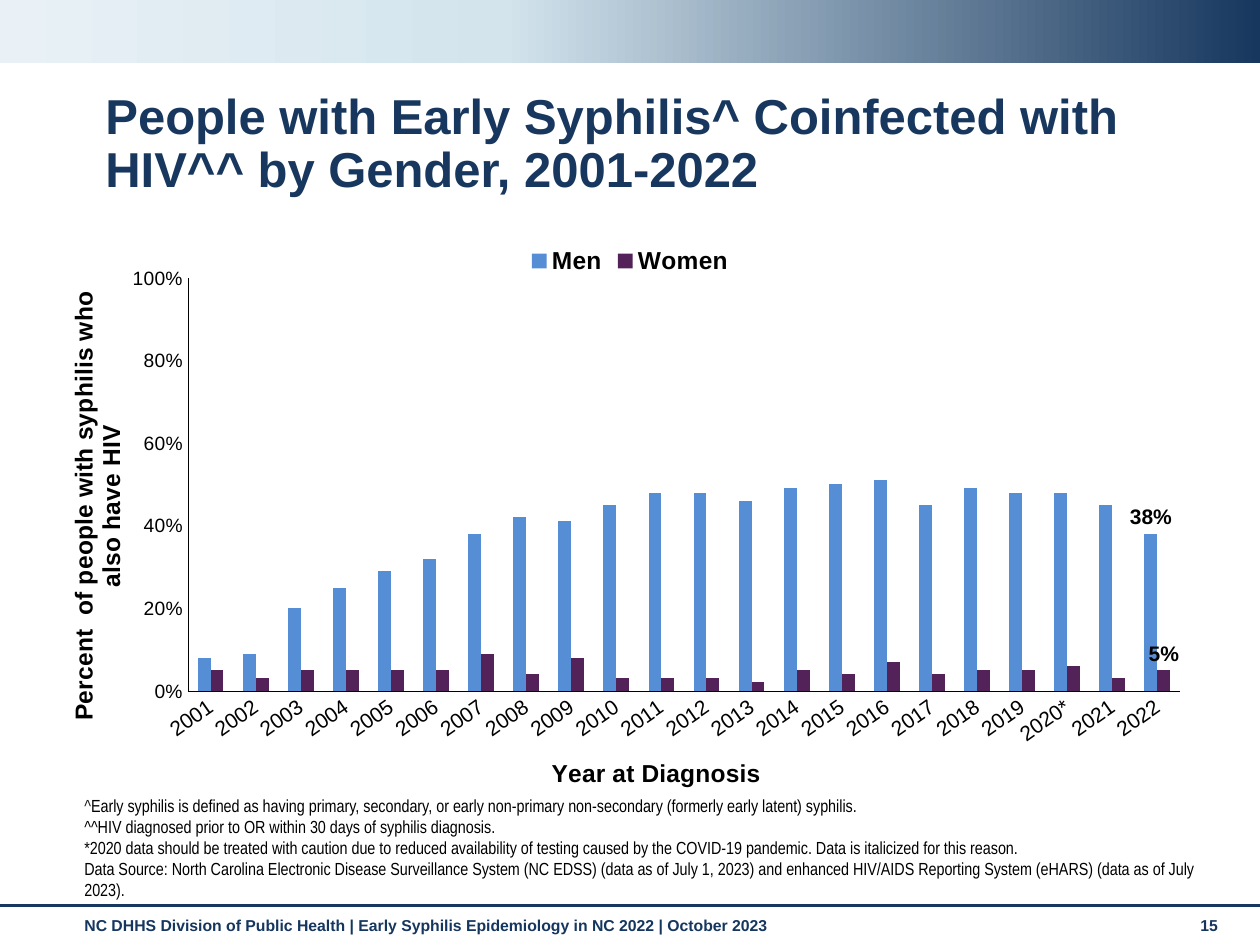
from copy import deepcopy

from lxml.etree import SubElement
from pptx import Presentation
from pptx.chart.data import CategoryChartData
from pptx.dml.color import RGBColor
from pptx.enum.chart import XL_CHART_TYPE as ChartType
from pptx.enum.chart import XL_LABEL_POSITION as LabelPosition
from pptx.enum.chart import XL_LEGEND_POSITION as LegendPosition
from pptx.enum.chart import XL_TICK_MARK as TickMark
from pptx.enum.shapes import MSO_CONNECTOR as Connector
from pptx.enum.shapes import MSO_SHAPE as Shape
from pptx.enum.text import MSO_ANCHOR as Anchor
from pptx.oxml.ns import qn
from pptx.util import Emu, Pt

NAVY = RGBColor(0x17, 0x37, 0x5E)
FOOTER_NAVY = RGBColor(0x15, 0x36, 0x5E)
PALE_BLUE = RGBColor(0xD3, 0xE4, 0xED)
ICE = RGBColor(0xE9, 0xF1, 0xF6)
BLACK = RGBColor(0, 0, 0)
CHARCOAL = RGBColor(0x1A, 0x1A, 0x1A)
MEN_BLUE = RGBColor(0x55, 0x8E, 0xD5)
WOMEN_PURPLE = RGBColor(0x52, 0x22, 0x58)

YEARS = [f"{year}*" if year == 2020 else str(year) for year in range(2001, 2023)]
GENDERS = [
    ("Men", MEN_BLUE, [8, 9, 20, 25, 29, 32, 38, 42, 41, 45, 48, 48,
                       46, 49, 50, 51, 45, 49, 48, 48, 45, 38]),
    ("Women", WOMEN_PURPLE, [5, 3, 5, 5, 5, 5, 9, 4, 8, 3, 3, 3,
                             2, 5, 4, 7, 4, 5, 5, 6, 3, 5]),
]
NOTES = [
    [("^", CHARCOAL),
     ("Early syphilis is defined as having primary, secondary, or early "
      "non-primary non-secondary (formerly early latent) syphilis.", BLACK)],
    [("^^HIV diagnosed prior to OR within 30 days of syphilis diagnosis.", BLACK)],
    [("*2020 data should be treated with caution due to reduced availability of testing "
      "caused by the COVID-19 pandemic. Data is italicized for this reason.", BLACK)],
    [("Data Source: North Carolina Electronic Disease Surveillance System (NC EDSS) "
      "(data as of July 1, 2023) and enhanced HIV/AIDS Reporting System (eHARS) "
      "(data as of July 2023).", BLACK)],
]


def px(length):
    """Turn whole pixels into EMU."""
    return Emu(round(length * 914400 / 126))


def style_font(font, size, color=BLACK, bold=True, name="Arial"):
    """Set face, size, weight and colour of a font."""
    font.name, font.size, font.bold = name, Pt(size), bold
    font.color.rgb = color


def add_text(slide, box, paragraphs, size, bold=True, name="Arial",
             anchor=Anchor.TOP, spacing=None):
    """Fill a wrapped text box with paragraphs of (text, colour) runs."""
    frame = slide.shapes.add_textbox(*map(px, box)).text_frame
    frame.word_wrap = True
    frame.vertical_anchor = anchor
    for index, runs in enumerate(paragraphs):
        paragraph = frame.paragraphs[0] if index == 0 else frame.add_paragraph()
        paragraph.line_spacing = spacing
        for text, color in runs:
            run = paragraph.add_run()
            run.text = text
            style_font(run.font, size, color, bold, name)


def add_banner(slide, box):
    """Draw the gradient band."""
    band = slide.shapes.add_shape(Shape.RECTANGLE, *map(px, box))
    band.shadow.inherit = False
    band.line.fill.background()
    band.fill.gradient()
    band.fill.gradient_angle = 180
    stop_list = next(band._element.iter(qn("a:gsLst")))
    stop_list.append(deepcopy(stop_list[-1]))
    colors = [(0, NAVY), (0.6, PALE_BLUE), (1, ICE)]
    for stop, (position, color) in zip(band.fill.gradient_stops, colors):
        stop.position = position
        stop.color.rgb = color


def add_footer(slide, box):
    """Draw the rule, source line and page number."""
    left, top, width, height = box
    rule = slide.shapes.add_connector(
        Connector.STRAIGHT, px(left), px(top), px(left + width), px(top))
    rule.line.color.rgb = NAVY
    rule.line.width = Pt(1.75)
    SubElement(rule._element.spPr, qn("a:effectLst"))
    credit = "NC DHHS Division of Public Health | Early Syphilis Epidemiology in NC 2022 | October 2023"
    for text, offset, span in [(credit, 72, 1101), ("15", 1188, 55)]:
        add_text(slide, (left + offset, top + 4, span, height - 4),
                 [[(text, FOOTER_NAVY)]], 9)


def style_axis(axis, title, tick_size):
    """Give an axis its title, tick labels and thin line."""
    axis.has_major_gridlines = False
    axis.major_tick_mark = axis.minor_tick_mark = TickMark.NONE
    axis.format.line.color.rgb = BLACK
    axis.format.line.width = Pt(0.25)
    style_font(axis.tick_labels.font, tick_size, bold=False)
    run = axis.axis_title.text_frame.paragraphs[0].add_run()
    run.text = title
    style_font(run.font, 14)


def tilt_tick_labels(axis, degrees):
    """Turn the tick labels of an axis."""
    body = axis._element.find(qn("c:txPr")).find(qn("a:bodyPr"))
    body.set("rot", str(degrees * 60000))
    body.set("vert", "horz")


def set_plot_layout(chart, plot_box, chart_size):
    """Fix the inner plot area inside a chart of the given size."""
    left, top, width, height = plot_box
    chart_width, chart_height = chart_size
    area = chart._chartSpace.chart.plotArea
    for old in area.findall(qn("c:layout")):
        area.remove(old)
    layout = SubElement(area, qn("c:layout"))
    area.insert(0, layout)
    manual = SubElement(layout, qn("c:manualLayout"))
    settings = [("layoutTarget", "inner"), ("xMode", "edge"), ("yMode", "edge"),
                ("x", left / chart_width), ("y", top / chart_height),
                ("w", width / chart_width), ("h", height / chart_height)]
    for tag, value in settings:
        SubElement(manual, qn(f"c:{tag}")).set("val", str(value))


def add_coinfection_chart(slide, box):
    """Chart the yearly coinfection share by gender."""
    data = CategoryChartData(number_format="0%")
    data.categories = YEARS
    for gender, _, percents in GENDERS:
        data.add_series(gender, [percent / 100 for percent in percents])
    chart = slide.shapes.add_chart(
        ChartType.COLUMN_CLUSTERED, *map(px, box), data).chart
    style_font(chart.font, 12)
    chart.has_title = False
    chart.has_legend = True
    chart.legend.position = LegendPosition.TOP
    chart.legend.include_in_layout = False
    style_font(chart.legend.font, 14)

    style_axis(chart.category_axis, "Year at Diagnosis", 12)
    tilt_tick_labels(chart.category_axis, -35)
    shares = chart.value_axis
    style_axis(shares, "Percent  of people with syphilis who also have HIV", 11)
    shares.minimum_scale, shares.maximum_scale, shares.major_unit = 0, 1, 0.2
    shares.tick_labels.number_format = "0%"
    shares.tick_labels.number_format_is_linked = False

    plot = chart.plots[0]
    plot.vary_by_categories = False
    plot.gap_width = 150
    plot.overlap = 0
    for series, (_, color, _) in zip(plot.series, GENDERS):
        series.format.fill.solid()
        series.format.fill.fore_color.rgb = color
        latest = series.points[len(YEARS) - 1].data_label
        style_font(latest.font, 12)
        latest.position = LabelPosition.OUTSIDE_END
    set_plot_layout(chart, (125, 45, 992, 413), box[2:])


def build_slide(slide, box):
    """Place every region of the syphilis and HIV slide."""
    left, top, width, height = box
    add_banner(slide, (left, top, width, 63))
    add_footer(slide, (left, top + 906, width, height - 906))
    title = "People with Early Syphilis^ Coinfected with HIV^^ by Gender, 2001-2022"
    add_text(slide, (left + 93, top + 86, 1150, 120), [[(title, NAVY)]], 28, spacing=0.9)
    add_text(slide, (left + 72, top + 784, 1171, 122), NOTES, 10,
             bold=False, name="Arial Narrow", anchor=Anchor.BOTTOM)
    add_coinfection_chart(slide, (left + 63, top + 233, 1134, 562))


def main():
    """Build and save the presentation."""
    deck = Presentation()
    deck.slide_width, deck.slide_height = px(1260), px(945)
    build_slide(deck.slides.add_slide(deck.slide_layouts[6]), (0, 0, 1260, 945))
    deck.save("out.pptx")


if __name__ == "__main__":
    main()
